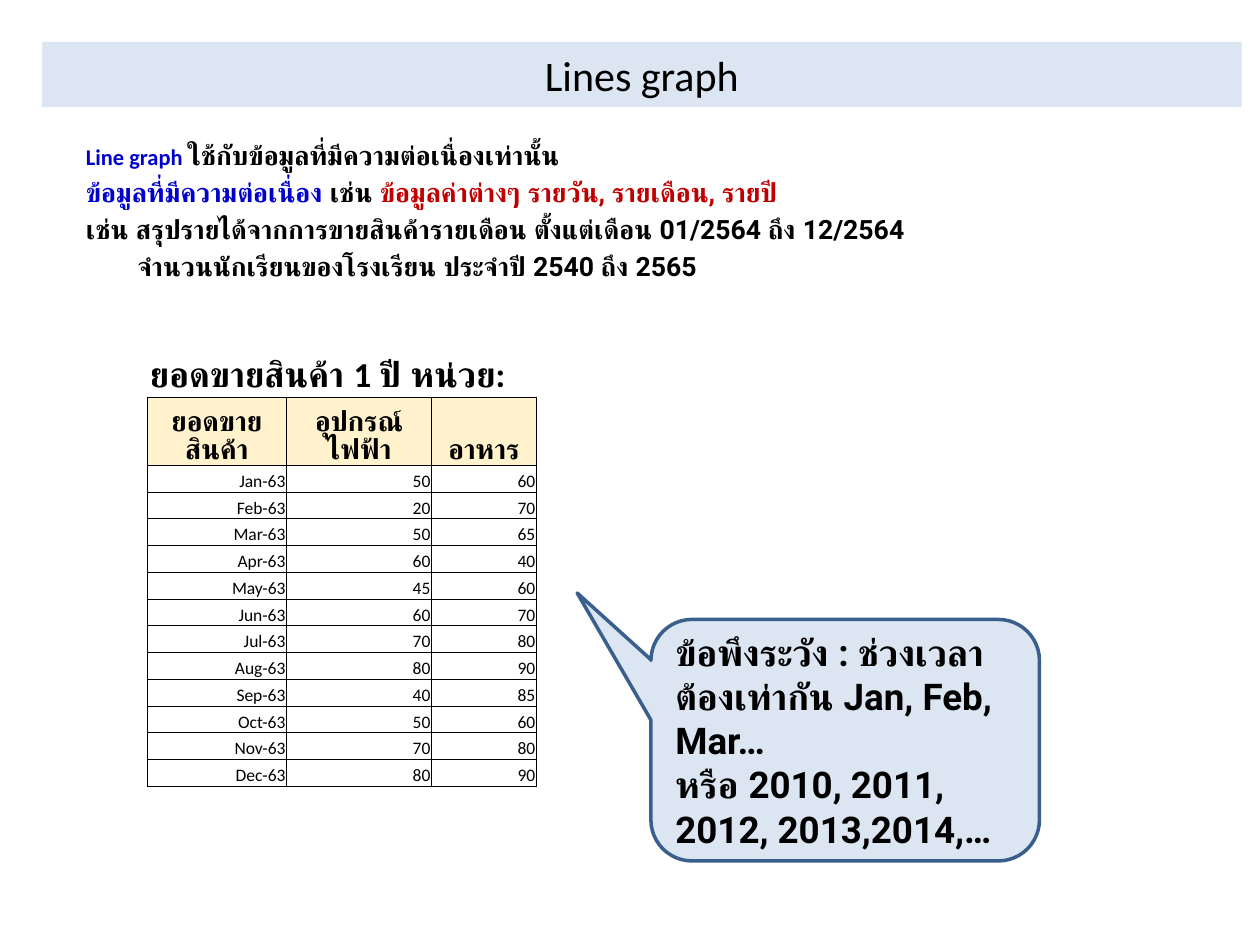
from lxml import etree
from pptx import Presentation
from pptx.dml.color import RGBColor
from pptx.enum.shapes import MSO_SHAPE
from pptx.enum.text import MSO_ANCHOR, PP_ALIGN
from pptx.oxml.ns import qn
from pptx.util import Inches, Pt

BAR, CALLOUT = MSO_SHAPE.RECTANGLE, MSO_SHAPE.ROUNDED_RECTANGULAR_CALLOUT
LEFT, CENTER, RIGHT = PP_ALIGN.LEFT, PP_ALIGN.CENTER, PP_ALIGN.RIGHT
TOP, MIDDLE, BOTTOM = MSO_ANCHOR.TOP, MSO_ANCHOR.MIDDLE, MSO_ANCHOR.BOTTOM
COLUMNS, ROWS = 120, 90

COLORS = {
    "ink": "000000",
    "term": "0000CC",
    "example": "C00000",
    "panel": "DCE6F2",
    "outline": "3A5F8C",
    "header": "FFF2CC",
}


def rgb(name):
    return RGBColor.from_string(COLORS[name])


def write(frame, paragraphs, size=12, font="Calibri", color="ink", bold=False,
          align=LEFT, anchor=TOP, before=0, indents=()):
    frame.word_wrap = True
    frame.vertical_anchor = anchor
    for index, runs in enumerate(paragraphs):
        paragraph = frame.paragraphs[0] if index == 0 else frame.add_paragraph()
        paragraph.alignment = align
        paragraph.space_before = Pt(before)
        if index in indents:
            paragraph._p.get_or_add_pPr().set("marL", str(Inches(0.41)))
        for words, changes in runs:
            look = {"size": size, "font": font, "color": color, **changes}
            run = paragraph.add_run()
            run.text = words
            run.font.size = Pt(look["size"])
            run.font.name = look["font"]
            run.font.bold = bold
            run.font.color.rgb = rgb(look["color"])


def border(cell, width=0.5):
    properties = cell._tc.get_or_add_tcPr()
    for index, side in enumerate(("a:lnL", "a:lnR", "a:lnT", "a:lnB")):
        line = etree.Element(qn(side), w=str(Pt(width)))
        fill = etree.SubElement(line, qn("a:solidFill"))
        etree.SubElement(fill, qn("a:srgbClr"), val=COLORS["ink"])
        properties.insert(index, line)


class LessonSlide:
    def __init__(self, deck):
        self.slide = deck.slides.add_slide(deck.slide_layouts[6])
        self.column = deck.slide_width / COLUMNS
        self.row = deck.slide_height / ROWS

    def place(self, left, top, width, height):
        return (round(left * self.column), round(top * self.row),
                round(width * self.column), round(height * self.row))

    def text(self, area, paragraphs, **style):
        box = self.slide.shapes.add_textbox(*self.place(*area))
        write(box.text_frame, paragraphs, **style)

    def panel(self, kind, area, paragraphs, outline=None, adjustments=(), **style):
        panel = self.slide.shapes.add_shape(kind, *self.place(*area))
        panel.shadow.inherit = False
        panel.fill.solid()
        panel.fill.fore_color.rgb = rgb("panel")
        for index, value in enumerate(adjustments):
            panel.adjustments[index] = value
        if outline:
            panel.line.color.rgb = rgb(outline)
            panel.line.width = Pt(2)
        else:
            panel.line.fill.background()
        write(panel.text_frame, paragraphs, anchor=MIDDLE, **style)

    def table(self, left, top, widths, header_height, row_height, records):
        height = header_height + row_height * (len(records) - 1)
        area = self.place(left, top, sum(widths), height)
        table = self.slide.shapes.add_table(len(records), len(widths), *area).table
        for column, width in zip(table.columns, widths):
            column.width = round(width * self.column)
        for index, record in enumerate(records):
            header = index == 0
            table.rows[index].height = round(
                (header_height if header else row_height) * self.row)
            for cell, value in zip(table.rows[index].cells, record):
                self.cell(cell, value, header)

    def cell(self, cell, value, header):
        cell.margin_left = cell.margin_right = cell.margin_top = Inches(0.01)
        cell.margin_bottom = 0
        if header:
            cell.fill.solid()
            cell.fill.fore_color.rgb = rgb("header")
        else:
            cell.fill.background()
        border(cell)
        write(cell.text_frame, [[(str(value), {})]], size=16 if header else 10,
              bold=header, align=CENTER if header else RIGHT)
        cell.vertical_anchor = BOTTOM


def main():
    deck = Presentation()
    deck.slide_width, deck.slide_height = Inches(10), Inches(7.5)
    lesson = LessonSlide(deck)

    lesson.panel(BAR, (4, 4, 114.25, 6.2), [[("Lines graph", {})]],
                 size=24, align=CENTER)

    example = {"color": "example"}
    roboto = {"font": "Roboto"}
    lesson.text((7, 12.6, 110, 13.4), [
        [("Line graph ", {"size": 12.8, "color": "term"}),
         ("ใช้กับข้อมูลที่มีความต่อเนื่องเท่านั้น", {})],
        [("ข้อมูลที่มีความต่อเนื่อง ", {"color": "term"}),
         ("เช่น ", {}),
         ("ข้อมูลค่าต่างๆ รายวัน", example),
         (", รายเดือน, รายปี", {**example, **roboto})],
        [("เช่น สรุปรายได้จากการขายสินค้ารายเดือน ตั้งแต่เดือน 01/2564 ถึง 12/2564", roboto)],
        [("จำนวนนักเรียนของโรงเรียน ประจำปี 2540 ถึง 2565", roboto)],
    ], size=15.2, bold=True, before=3, indents=(3,))

    lesson.panel(CALLOUT, (62, 59, 37, 23), [
        [("ข้อพึงระวัง : ช่วงเวลาต้องเท่ากัน Jan, Feb, Mar…", {})],
        [("หรือ 2010, 2011, 2012, 2013,2014,…", {})],
    ], outline="outline", adjustments=(-0.69, -0.61, 0.17),
        size=21, font="Roboto", bold=True)

    lesson.text((13.1, 33, 39, 5.3),
                [[("ยอดขายสินค้า 1 ปี หน่วย:", {})]], size=20, bold=True)

    months = "Jan Feb Mar Apr May Jun Jul Aug Sep Oct Nov Dec".split()
    electrical = [50, 20, 50, 60, 45, 60, 70, 80, 40, 50, 70, 80]
    food = [60, 70, 65, 40, 60, 70, 80, 90, 85, 60, 80, 90]
    sales = [(f"{month}-63", *amounts)
             for month, *amounts in zip(months, electrical, food)]
    lesson.table(14, 37.8, (13.3, 13.8, 10), 4.1, 2.55,
                 [("ยอดขายสินค้า", "อุปกรณ์ไฟฟ้า", "อาหาร"), *sales])

    deck.save("out.pptx")


if __name__ == "__main__":
    main()
